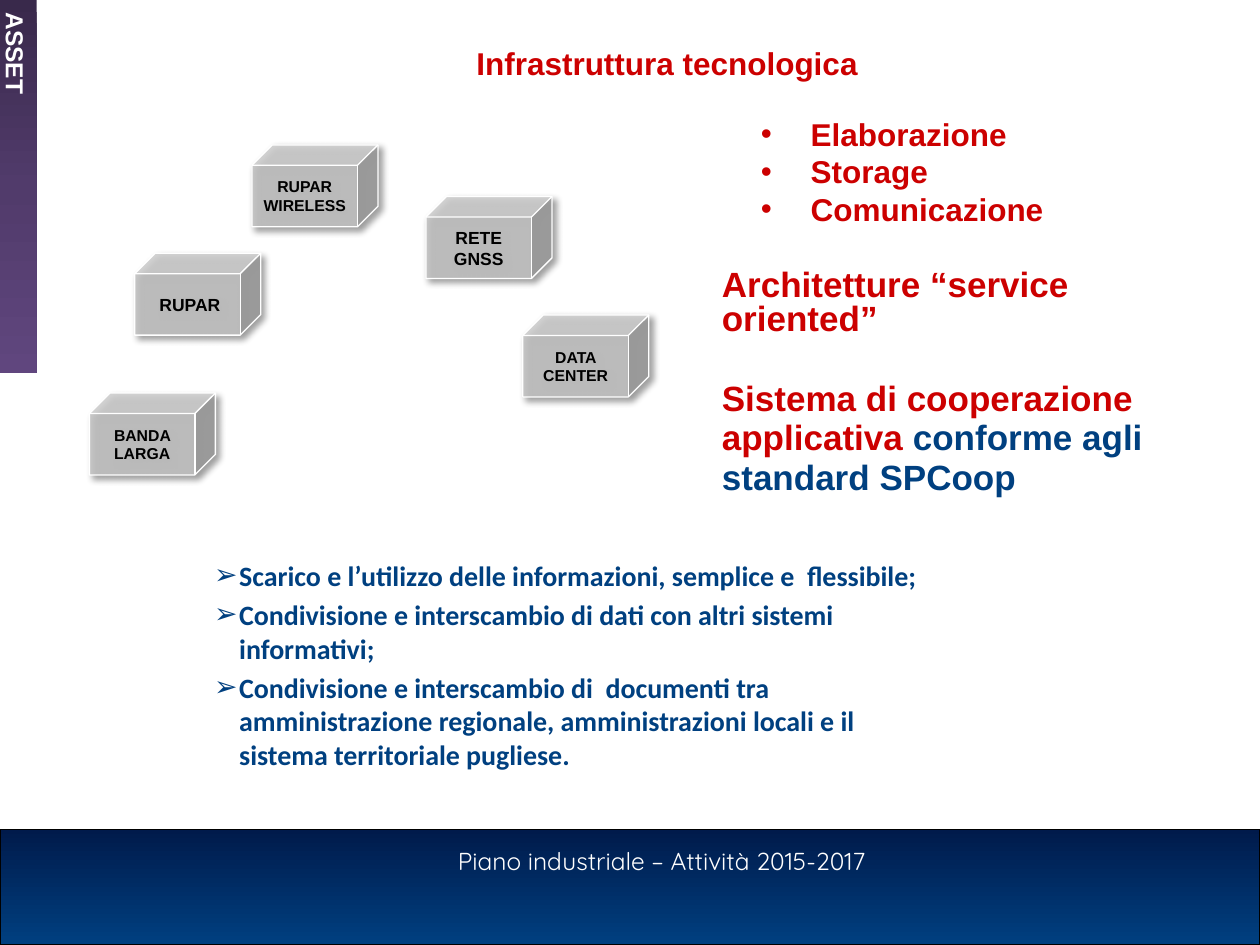
from lxml import etree
from copy import deepcopy
from pptx import Presentation
from pptx.dml.color import RGBColor
from pptx.enum.shapes import MSO_SHAPE
from pptx.enum.text import MSO_ANCHOR, MSO_AUTO_SIZE, PP_ALIGN
from pptx.oxml.ns import qn
from pptx.util import Pt

RECTANGLE, CUBE = MSO_SHAPE.RECTANGLE, MSO_SHAPE.CUBE
TOP, MIDDLE = MSO_ANCHOR.TOP, MSO_ANCHOR.MIDDLE
LEFT, CENTER = PP_ALIGN.LEFT, PP_ALIGN.CENTER
NO_AUTOFIT = MSO_AUTO_SIZE.NONE

RED = RGBColor(0xCC, 0x00, 0x00)
BLUE = RGBColor(0x00, 0x40, 0x80)
NAVY = RGBColor(0x00, 0x1A, 0x4B)
SILVER = RGBColor(0xC0, 0xC0, 0xC0)
BLACK = RGBColor(0x00, 0x00, 0x00)
WHITE = RGBColor(0xFF, 0xFF, 0xFF)
PURPLES = [RGBColor(0x39, 0x29, 0x4B), RGBColor(0x51, 0x3B, 0x6B), RGBColor(0x60, 0x46, 0x7E)]

CUBE_SIZE = (72, 46.8)


class SlideBuilder:
    """Holds the slide and its style; all lengths are in points."""

    font = "Arial"

    def __init__(self, slide):
        self.slide = slide

    def add_paragraphs(self, frame, paragraphs, size, bold=True, font=None, align=LEFT,
                       spacing=1.0, gap=0, bullet=None, indent=0):
        """Each paragraph is a list of (text, colour) runs."""
        for index, runs in enumerate(paragraphs):
            paragraph = frame.paragraphs[0] if index == 0 else frame.add_paragraph()
            if bullet:
                properties = paragraph._p.get_or_add_pPr()
                properties.set("marL", str(Pt(indent)))
                properties.set("indent", str(-Pt(indent)))
                etree.SubElement(properties, qn("a:buFont")).set("typeface", self.font)
                etree.SubElement(properties, qn("a:buChar")).set("char", bullet)
            paragraph.alignment = align
            paragraph.line_spacing = spacing
            paragraph.space_before = Pt(gap if index else 0)
            for text, color in runs:
                for number, line in enumerate(text.split("\n")):
                    if number:
                        paragraph.add_line_break()
                    run = paragraph.add_run()
                    run.text = line
                    run.font.name = font or self.font
                    run.font.size = Pt(size)
                    run.font.bold = bold
                    run.font.color.rgb = color

    def title(self, box, text, size, color):
        shape = self.slide.shapes.title
        shape.left, shape.top, shape.width, shape.height = map(Pt, box)
        frame = shape.text_frame
        frame.auto_size = NO_AUTOFIT
        frame.vertical_anchor = TOP
        self.add_paragraphs(frame, [[(text, color)]], size, align=CENTER, spacing=0.8)

    def text(self, box, paragraphs, size, **style):
        frame = self.slide.shapes.add_textbox(*map(Pt, box)).text_frame
        frame.word_wrap = True
        self.add_paragraphs(frame, paragraphs, size, **style)

    def gradient_band(self, box, colors, line=None):
        """Rectangle with evenly spaced colours running from top to bottom."""
        shape = self.slide.shapes.add_shape(RECTANGLE, *map(Pt, box))
        shape.shadow.inherit = False
        shape.fill.gradient()
        shape.fill.gradient_angle = 270
        stop_list = shape._element.spPr.find(".//" + qn("a:gsLst"))
        for _ in colors[2:]:
            stop_list.append(deepcopy(stop_list[0]))
        for index, (stop, color) in enumerate(zip(shape.fill.gradient_stops, colors)):
            stop.color.rgb = color
            stop.position = index / (len(colors) - 1)
        if line is None:
            shape.line.fill.background()
        else:
            shape.line.color.rgb = line
            shape.line.width = Pt(0.75)
        return shape

    def cube(self, left, top, label, size):
        shape = self.slide.shapes.add_shape(CUBE, *map(Pt, (left, top) + CUBE_SIZE))
        shape.adjustments[0] = 0.25
        shape.fill.solid()
        shape.fill.fore_color.rgb = SILVER
        shape.line.color.rgb = WHITE
        shape.line.width = Pt(0.75)
        # Translucent fill and soft shadow
        properties = shape._element.spPr
        fill_color = properties.find(qn("a:solidFill"))[0]
        etree.SubElement(fill_color, qn("a:alpha")).set("val", "84000")
        shape.shadow.inherit = False
        shadow = etree.SubElement(properties.find(qn("a:effectLst")), qn("a:outerShdw"),
                                  blurRad=str(Pt(4)), dist=str(Pt(3)), dir="2700000",
                                  algn="tl", rotWithShape="0")
        shadow_color = etree.SubElement(shadow, qn("a:srgbClr"), val="000000")
        etree.SubElement(shadow_color, qn("a:alpha")).set("val", "43000")
        frame = shape.text_frame
        frame.word_wrap = False
        frame.vertical_anchor = MIDDLE
        self.add_paragraphs(frame, [[(label, BLACK)]], size, align=CENTER)


def main():
    presentation = Presentation()
    presentation.slide_width, presentation.slide_height = Pt(720), Pt(540)
    slide = presentation.slides.add_slide(presentation.slide_layouts[5])
    builder = SlideBuilder(slide)

    # Footer
    builder.gradient_band((0, 473.8, 720, 66.2), [NAVY, BLUE], line=BLACK)
    builder.text((144.7, 480.2, 470.9, 24.5),
                 [[("Piano industriale – Attività 2015-2017 ", WHITE)]],
                 14, bold=False, font="Quicksand", align=CENTER)

    # Title
    builder.title((216, 25.9, 330.5, 33.8), "Infrastruttura tecnologica", 18, RED)

    # Benefits
    benefits = [
        "Scarico e l’utilizzo delle informazioni, semplice e  flessibile; ",
        "Condivisione e interscambio di dati con altri sistemi informativi; ",
        "Condivisione e interscambio di  documenti tra amministrazione regionale, "
        "amministrazioni locali e il sistema territoriale pugliese.  ",
    ]
    builder.text((115.2, 315.4, 431.3, 130.3), [[(text, BLUE)] for text in benefits],
                 16, font="Calibri", gap=3.3, bullet="➢", indent=14.4)

    # Infrastructure cubes
    for left, top, label, size in [
        (77, 144.7, " RUPAR", 10),
        (51.1, 224.6, " BANDA \nLARGA", 9),
        (144, 82.8, " RUPAR \nWIRELESS", 9),
        (243.4, 112.3, " RETE \nGNSS", 10),
        (298.8, 180, " DATA \nCENTER", 9),
    ]:
        builder.cube(left, top, label, size)

    # Capabilities
    capabilities = ["Elaborazione", "Storage", "Comunicazione"]
    builder.text((427.7, 66.2, 282.2, 79.2), [[(text, RED)] for text in capabilities],
                 18, spacing=0.8, gap=4.3, bullet="•", indent=28.5)

    # Architecture and cooperation
    builder.text((405.4, 151.2, 282.2, 56.9),
                 [[("Architetture “service oriented”", RED)]], 20, spacing=0.8)
    builder.text((405.4, 213.1, 282.2, 79.2),
                 [[("Sistema di cooperazione applicativa", RED),
                   (" conforme agli standard SPCoop", BLUE)]], 20, spacing=0.95)

    # Section tab
    tab = builder.gradient_band((-2.9, 0, 23.8, 213.1), PURPLES)
    frame = tab.text_frame
    frame.vertical_anchor = TOP
    frame._txBody.bodyPr.set("vert", "eaVert")
    builder.add_paragraphs(frame, [[("ASSET", WHITE)]], 14)

    presentation.save("out.pptx")


if __name__ == "__main__":
    main()
